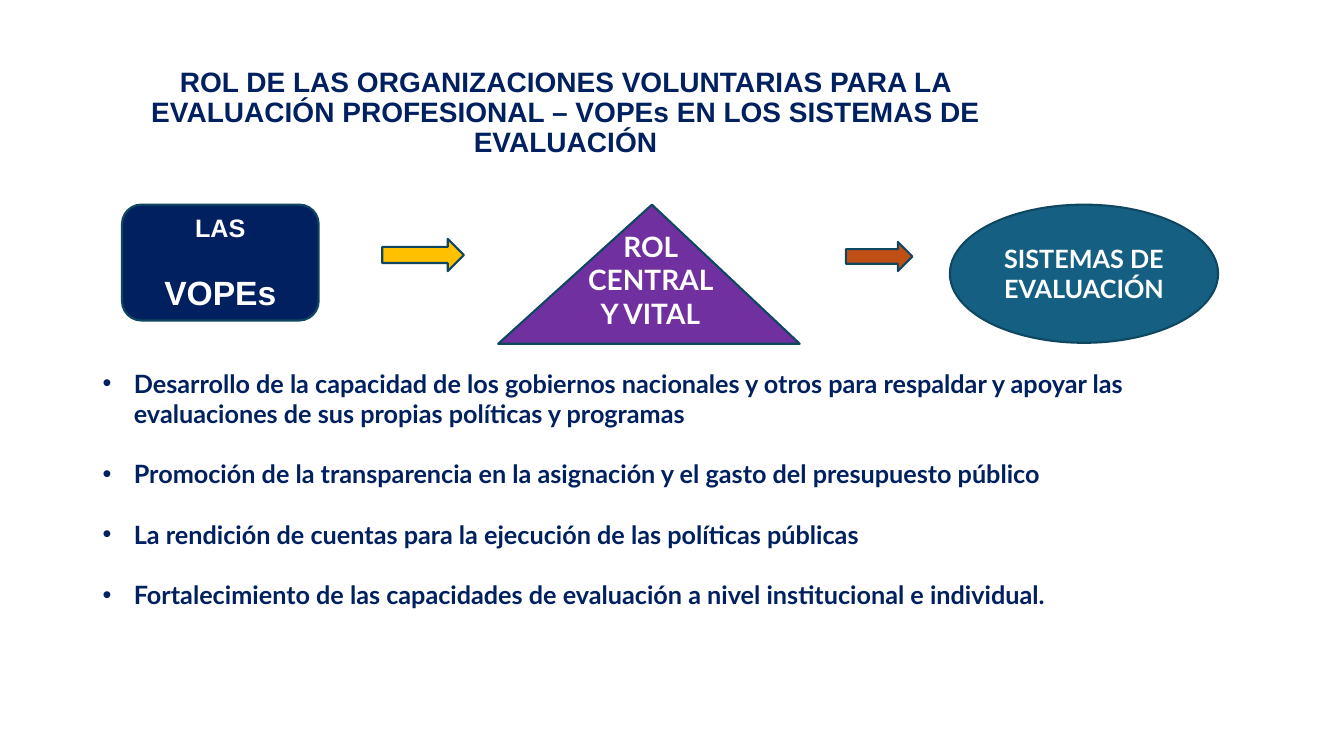
from pptx import Presentation
from pptx.dml.color import RGBColor as Rgb
from pptx.enum.shapes import MSO_SHAPE as Kind
from pptx.enum.text import MSO_ANCHOR as Anchor, PP_ALIGN as Align
from pptx.oxml.ns import qn
from pptx.util import Inches, Pt
from lxml.etree import SubElement

WIDE, HIGH = Inches(13.33), Inches(7.5)
HUES = {"navy": "002060", "violet": "7030A0", "teal": "156082", "gold": "FFC000",
        "rust": "C04F15", "edge": "104760", "white": "FFFFFF"}
TITLE = ("ROL DE LAS ORGANIZACIONES VOLUNTARIAS PARA LA EVALUACIÓN PROFESIONAL – "
         "VOPEs EN LOS SISTEMAS DE EVALUACIÓN")
POINTS = [
    "Desarrollo de la capacidad de los gobiernos nacionales y otros para respaldar y apoyar "
    "las evaluaciones de sus propias políticas y programas",
    "Promoción de la transparencia en la asignación y el gasto del presupuesto público",
    "La rendición de cuentas para la ejecución de las políticas públicas",
    "Fortalecimiento de las capacidades de evaluación a nivel institucional e individual.",
]


def hue(name):
    return Rgb.from_string(HUES[name])


def part(box, left, top, wide, high):
    x, y, w, h = box
    return (int(x + w * left / 100), int(y + h * top / 100),
            int(w * wide / 100), int(h * high / 100))


def write(para, text, font, size, tone, **form):
    for key, val in form.items():
        setattr(para, key, val)
    para.text = text
    look = {"name": font, "size": Pt(size), "bold": True}
    for key, val in look.items():
        setattr(para.font, key, val)
    para.font.color.rgb = hue(tone)


def draw(slide, kind, box, tone):
    shape = slide.shapes.add_shape(kind, *box)
    shape.shadow.inherit = False
    shape.fill.solid()
    shape.fill.fore_color.rgb = hue(tone)
    shape.line.color.rgb = hue("edge")
    shape.line.width = Pt(1.5)
    return shape


def label(shape, lines, font, gap=0):
    frame = shape.text_frame
    frame.word_wrap = True
    frame.vertical_anchor = Anchor.MIDDLE
    for row, (text, size) in enumerate(lines):
        para = frame.add_paragraph() if row else frame.paragraphs[0]
        form = {"space_before": Pt(gap)} if row else {}
        write(para, text, font, size, "white", alignment=Align.CENTER, **form)
    return frame


def head(slide, box):
    frame = slide.shapes.add_textbox(*box).text_frame
    frame.word_wrap = True
    frame.vertical_anchor = Anchor.MIDDLE
    write(frame.paragraphs[0], TITLE, "Arial", 20, "navy",
          alignment=Align.CENTER, line_spacing=0.9)


def flow(slide, box):
    group = draw(slide, Kind.ROUNDED_RECTANGLE, part(box, 0, 0, 17.94, 83.3), "navy")
    label(group, [("LAS", 18), ("VOPEs", 24)], "Arial", 20.7)

    role = draw(slide, Kind.ISOSCELES_TRIANGLE, part(box, 34.32, 0, 27.51, 100), "violet")
    role.adjustments[0] = 0.51
    frame = label(role, [("ROL CENTRAL Y VITAL", 20)], "Lato")
    frame.vertical_anchor = Anchor.BOTTOM
    frame.margin_bottom = int(box[3] * 0.1)

    goal = draw(slide, Kind.OVAL, part(box, 75.53, 0, 24.47, 99.3), "teal")
    label(goal, [("SISTEMAS DE EVALUACIÓN", 18)], "Lato")

    for spot, tone in [((23.74, 24.6, 7.45, 23.2), "gold"),
                       ((66.05, 26.8, 6.07, 21), "rust")]:
        draw(slide, Kind.RIGHT_ARROW, part(box, *spot), tone)


def points(slide, box):
    frame = slide.shapes.add_textbox(*box).text_frame
    frame.word_wrap = True
    for row, text in enumerate(POINTS):
        para = frame.add_paragraph() if row else frame.paragraphs[0]
        form = {"space_before": Pt(21.6)} if row else {}
        props = para._p.get_or_add_pPr()
        props.set("marL", str(Inches(0.31)))
        props.set("indent", str(-Inches(0.31)))
        SubElement(props, qn("a:buFont")).set("typeface", "Arial")
        SubElement(props, qn("a:buChar")).set("char", "•")
        write(para, text, "Lato", 18, "navy", **form)


def main():
    deck = Presentation()
    deck.slide_width, deck.slide_height = WIDE, HIGH
    slide = deck.slides.add_slide(deck.slide_layouts[6])
    page = (0, 0, WIDE, HIGH)
    head(slide, part(page, 6.9, 5.33, 70.35, 19.33))
    flow(slide, part(page, 9.08, 27.07, 81.55, 18.4))
    points(slide, part(page, 6.9, 48, 84.85, 50.67))
    deck.save("out.pptx")


if __name__ == "__main__":
    main()
